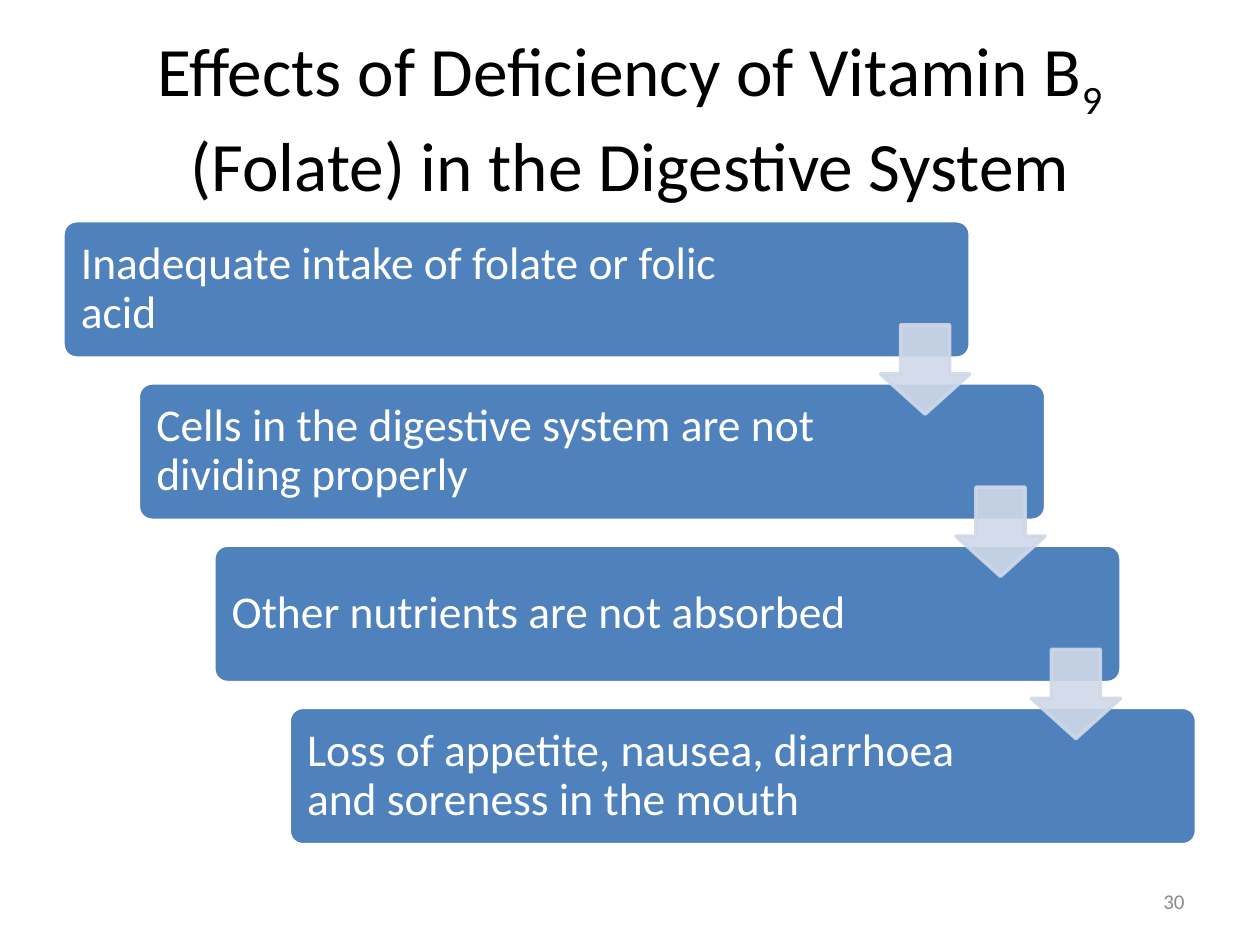
from lxml.etree import SubElement
from pptx import Presentation
from pptx.dml.color import RGBColor
from pptx.enum.shapes import MSO_SHAPE as Shape
from pptx.enum.text import MSO_ANCHOR as Anchor, PP_ALIGN as Align
from pptx.oxml.ns import qn
from pptx.util import Cm, Pt

COLORS = {
    "step": "4F81BD",
    "arrow": "D0D8E8",
    "white": "FFFFFF",
    "title": "000000",
    "number": "8C8C8C",
}
FONT = "Calibri"
STEPS = [
    "Inadequate intake of folate or folic acid",
    "Cells in the digestive system are not dividing properly",
    "Other nutrients are not absorbed",
    "Loss of appetite, nausea, diarrhoea and soreness in the mouth",
]
SHIFT_X, SHIFT_Y = 1.52, 3.27
STEP_LEFT, STEP_TOP, STEP_WIDTH, STEP_HEIGHT = 1.27, 4.45, 18.29, 2.77
ARROW_LEFT, ARROW_TOP, ARROW_SIZE = 17.75, 6.55, 1.8


def rgb(name):
    return RGBColor.from_string(COLORS[name])


def write_text(shape, text, *, size, color, align=Align.LEFT, spacing=None,
               insets=(0.25, 0.13, 0.25, 0.13)):
    """Fill a shape with one paragraph; parts between underscores are subscripts."""
    frame = shape.text_frame
    frame.word_wrap = True
    frame.vertical_anchor = Anchor.MIDDLE
    (frame.margin_left, frame.margin_top,
     frame.margin_right, frame.margin_bottom) = map(Cm, insets)
    paragraph = frame.paragraphs[0]
    paragraph.alignment = align
    paragraph.line_spacing = spacing
    for index, part in enumerate(text.split("_")):
        run = paragraph.add_run()
        run.text = part
        run.font.name = FONT
        run.font.size = Pt(size)
        run.font.color.rgb = rgb(color)
        if index % 2:
            run.font._element.set("baseline", "-25000")


def add_label(slide, text, left, top, width, height, **text_format):
    box = slide.shapes.add_textbox(Cm(left), Cm(top), Cm(width), Cm(height))
    write_text(box, text, **text_format)


def add_preset(slide, preset, left, top, width, height, *, fill, line, adjustments):
    shape = slide.shapes.add_shape(preset, Cm(left), Cm(top), Cm(width), Cm(height))
    for index, value in enumerate(adjustments):
        shape.adjustments[index] = value
    shape.shadow.inherit = False
    shape.fill.solid()
    shape.fill.fore_color.rgb = rgb(fill)
    shape.line.color.rgb = rgb(line)
    shape.line.width = Pt(2)
    return shape


def set_opacity(shape, percent):
    """Apply the opacity to both the fill and the outline."""
    for color in shape._element.spPr.iter(qn("a:srgbClr")):
        SubElement(color, qn("a:alpha")).set("val", str(percent * 1000))


def add_step(slide, index, text):
    step = add_preset(slide, Shape.ROUNDED_RECTANGLE,
                      STEP_LEFT + index * SHIFT_X, STEP_TOP + index * SHIFT_Y,
                      STEP_WIDTH, STEP_HEIGHT,
                      fill="step", line="white", adjustments=[0.1])
    write_text(step, text, size=26, color="white", spacing=0.9,
               insets=(0.28, 0.28, 3.6, 0.28))


def add_step_arrow(slide, index):
    arrow = add_preset(slide, Shape.DOWN_ARROW,
                       ARROW_LEFT + index * SHIFT_X, ARROW_TOP + index * SHIFT_Y,
                       ARROW_SIZE, ARROW_SIZE,
                       fill="arrow", line="arrow", adjustments=[0.55, 0.45])
    set_opacity(arrow, 90)


def main():
    presentation = Presentation()
    presentation.slide_width, presentation.slide_height = Cm(25.4), Cm(19.05)
    slide = presentation.slides.add_slide(presentation.slide_layouts[6])

    add_label(slide, "Effects of Deficiency of Vitamin B_9_ (Folate) in the Digestive System",
              1.27, 0.76, 22.86, 3.18, size=39.6, color="title", align=Align.CENTER)
    for index, text in enumerate(STEPS):
        add_step(slide, index, text)
    for index in range(len(STEPS) - 1):
        add_step_arrow(slide, index)
    add_label(slide, "30", 18.2, 17.66, 5.93, 1.01,
              size=12, color="number", align=Align.RIGHT)

    presentation.save("out.pptx")


if __name__ == "__main__":
    main()
